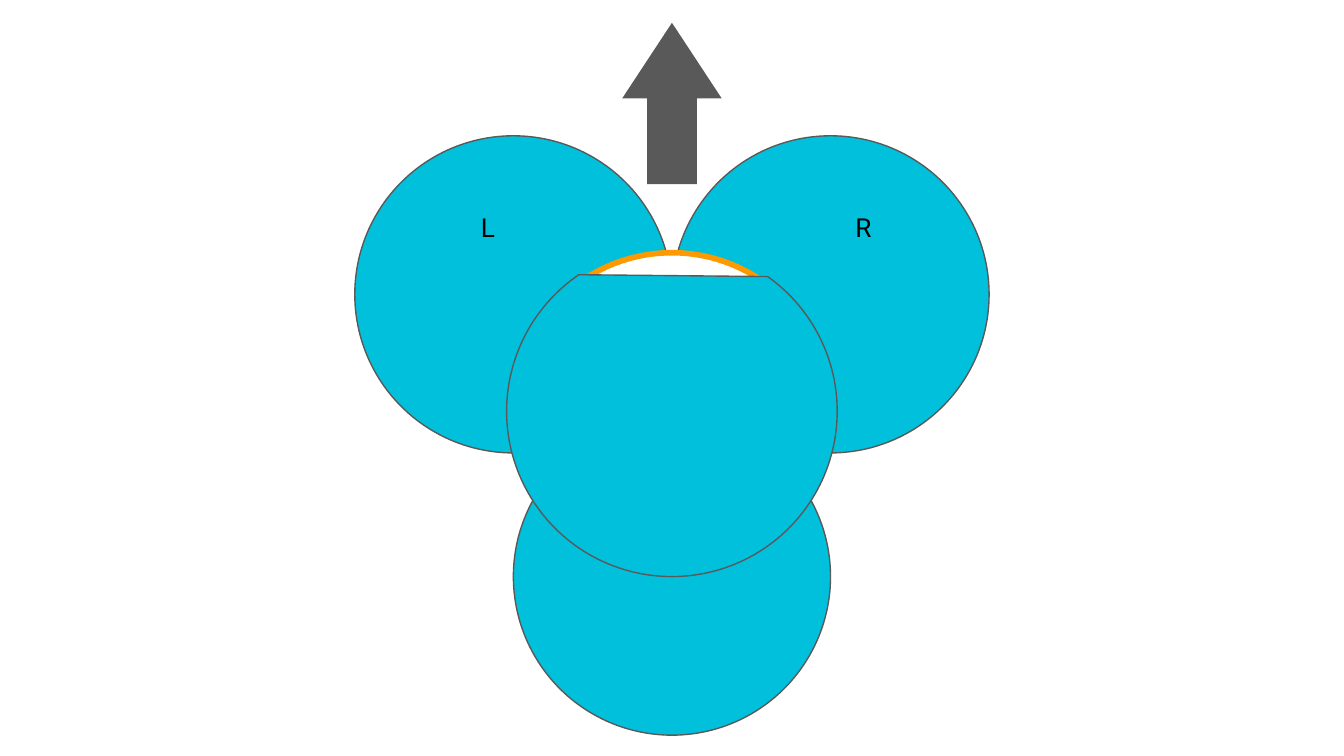
from pptx import Presentation
from pptx.dml.color import RGBColor
from pptx.enum.shapes import MSO_SHAPE as Kind
from pptx.enum.text import PP_ALIGN as Align
from pptx.util import Inches, Pt

theme = {
    "ball": RGBColor.from_string("00C0DC"),
    "outline": RGBColor.from_string("595959"),
    "ring": RGBColor.from_string("FF9900"),
    "paper": RGBColor.from_string("FFFFFF"),
    "ink": RGBColor.from_string("000000"),
    "font": "Roboto",
    "label": Pt(14),
    "thin": Pt(0.75),
    "thick": Pt(3),
}

# Widescreen slide, 16:9
deck = Presentation()
deck.slide_width = Inches(10)
deck.slide_height = deck.slide_width * 9 // 16
slide = deck.slides.add_slide(deck.slide_layouts[6])

# Square grid: 100 cells across the slide, measured from the top left
cell = deck.slide_width / 100
axis = 50
ball = 23.6


def box(center_x, center_y, width, height):
    corner = (center_x - width / 2, center_y - height / 2)
    return [round(cells * cell) for cells in (*corner, width, height)]


def add_figure(kind, place, fill, line, weight, rotation=0):
    figure = slide.shapes.add_shape(kind, *place)
    figure.shadow.inherit = False
    figure.rotation = rotation
    figure.fill.solid()
    figure.fill.fore_color.rgb = fill
    if weight:
        figure.line.color.rgb = line
        figure.line.width = weight
    else:
        figure.line.fill.background()
    return figure


# Outer balls: left, right, bottom
for center_x, center_y in ((axis - ball / 2, 21.9), (axis + ball / 2, 21.9), (axis, 42.9)):
    add_figure(Kind.OVAL, box(center_x, center_y, ball, ball),
               theme["ball"], theme["outline"], theme["thin"], 270)

# Ringed ball in the middle, covered by a larger one cut flat at the top
add_figure(Kind.OVAL, box(axis, 30.6, ball, ball),
           theme["paper"], theme["ring"], theme["thick"], 270)
cover = add_figure(Kind.CHORD, box(axis, 30.6, ball + 1, ball + 1),
                   theme["ball"], theme["outline"], theme["thin"], 270)
cover.adjustments[0], cover.adjustments[1] = 21.24, 195.43

# Direction arrow
arrow = add_figure(Kind.UP_ARROW, box(axis, 7.7, 7.4, 12),
                   theme["outline"], None, None)
arrow.adjustments[0], arrow.adjustments[1] = 0.5, 0.76

# Side labels
for side, center_x, width in (("L", 36.3, 5.4), ("R", 64.25, 6.1)):
    label = slide.shapes.add_textbox(*box(center_x, 18.1, width, 5.8)).text_frame
    label.word_wrap = True
    line = label.paragraphs[0]
    line.text = side
    line.alignment = Align.CENTER
    line.font.name = theme["font"]
    line.font.size = theme["label"]
    line.font.color.rgb = theme["ink"]

deck.save("out.pptx")
